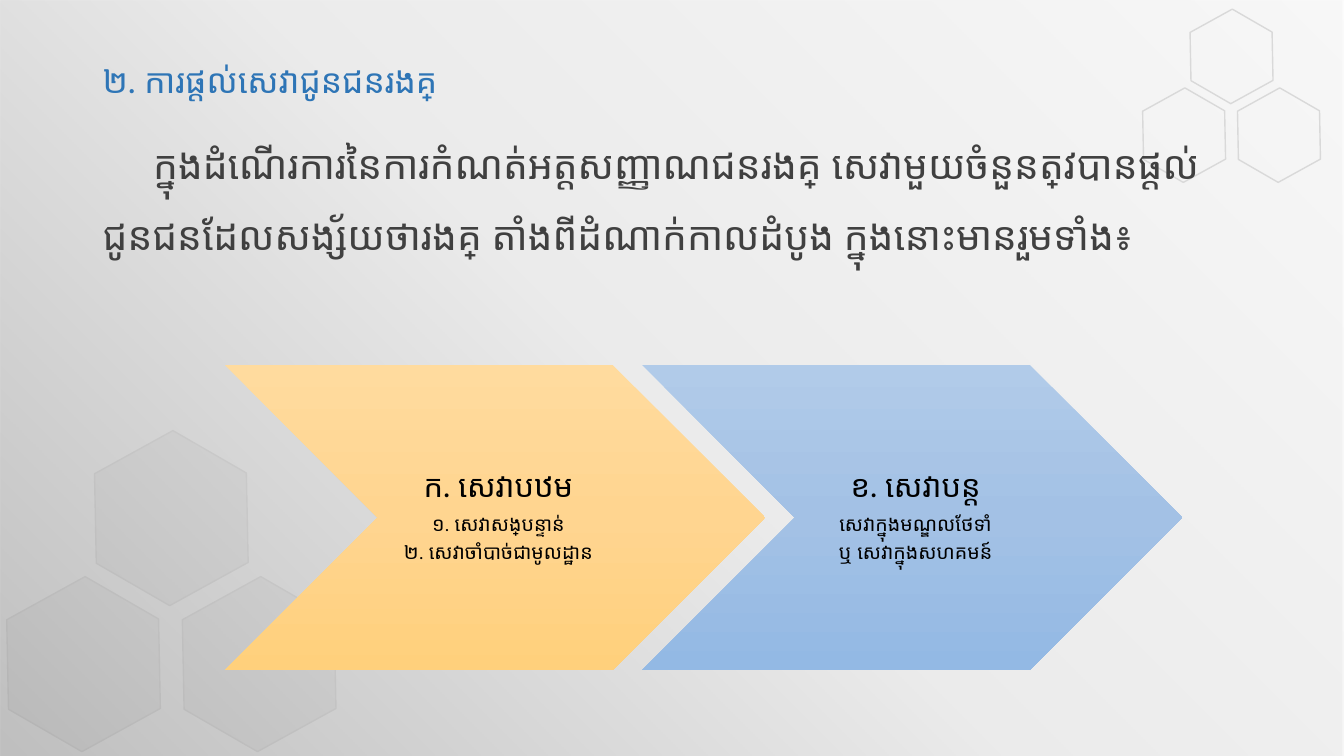
from dataclasses import dataclass
from typing import Any, Optional

from lxml import etree
from pptx import Presentation, util as u
from pptx.dml.color import RGBColor
from pptx.enum import shapes, text
from pptx.oxml.ns import qn

HUES = {
    "blue": "2E75B6", "dark": "404040", "black": "000000",
    "pale": "F2F2F2", "edge": "E7E6E6", "mist": "D9D9D9", "gray": "808080",
    "sand1": "FFDB9E", "sand2": "FFD590", "sand3": "FFD07C",
    "sky1": "B1CBE9", "sky2": "A3C1E5", "sky3": "93B9E4",
}
WIDE, HIGH = 13.33, 7.5
KIND = shapes.MSO_SHAPE


@dataclass
class Box:
    left: float
    top: float
    width: float
    height: float

    def emu(self) -> tuple[int, int, int, int]:
        return (u.Inches(self.left * WIDE / 100), u.Inches(self.top * HIGH / 100),
                u.Inches(self.width * WIDE / 100), u.Inches(self.height * HIGH / 100))


@dataclass
class Comb:
    head: Box
    edge: str
    fill: Optional[str] = None


@dataclass
class Line:
    words: str
    size: int
    font: str
    hue: str
    lead: float = 0.9
    after: int = 0
    align: Any = text.PP_ALIGN.LEFT


@dataclass
class Step:
    hues: list[str]
    title: str
    items: list[str]


COMBS = [
    Comb(Box(6.15, 58.4, 13.2, 20.27), "edge", "pale"),
    Comb(Box(88.07, 2, 7.13, 10.93), "mist"),
]
STEPS = [
    Step(["sand1", "sand2", "sand3"], "ក. សេវាបឋម",
         ["១. សេវាសង្គ្រោះបន្ទាន់", "២. សេវាចាំបាច់ជាមូលដ្ឋាន"]),
    Step(["sky1", "sky2", "sky3"], "ខ. សេវាបន្ត",
         ["សេវាក្នុងមណ្ឌលថែទាំ", "ឬ សេវាក្នុងសហគមន៍"]),
]
TITLE = Line("២. ការផ្តល់សេវាជូនជនរងគ្រោះ", 24, "Lato", "blue")
BODY = Line(
    "\tក្នុងដំណើរការនៃការកំណត់អត្តសញ្ញាណជនរងគ្រោះ សេវាមួយចំនួនត្រូវបាន"
    "ផ្តល់ជូនជនដែលសង្ស័យថារងគ្រោះ តាំងពីដំណាក់កាលដំបូង "
    "ក្នុងនោះមានរួមទាំង៖", 28, "Roboto", "dark", 1.5)


def tint(name: str) -> RGBColor:
    return RGBColor.from_string(HUES[name])


def draw(host: Any, kind: Any, box: Box) -> Any:
    shape = host.add_shape(kind, *box.emu())
    shape.shadow.inherit = False
    shape.fill.background()
    shape.line.fill.background()
    return shape


def blend(shape: Any, stops: list[tuple[int, str]], angle: int, alpha: int = 100) -> None:
    grad = etree.Element(qn("a:gradFill"), rotWithShape="1")
    group = etree.SubElement(grad, qn("a:gsLst"))
    for place, name in stops:
        stop = etree.SubElement(group, qn("a:gs"), pos=str(place * 1000))
        hue = etree.SubElement(stop, qn("a:srgbClr"), val=HUES[name])
        if alpha < 100:
            etree.SubElement(hue, qn("a:alpha"), val=str(alpha * 1000))
    etree.SubElement(grad, qn("a:lin"), ang=str(angle * 60000), scaled="0")
    props = shape._element.spPr
    props.replace(props.find(qn("a:noFill")), grad)


def comb(host: Any, item: Comb) -> None:
    group = host.add_group_shape().shapes
    head = item.head
    for side, row in ((0, 0), (-1, 1), (1, 1)):
        cell = draw(group, KIND.HEXAGON, Box(
            head.left + side * 0.495 * head.width,
            head.top + row * 0.953 * head.height, head.width, head.height))
        cell.rotation = 30
        cell.adjustments[0] = 0.302
        cell.adjustments[1] = 1.155
        cell.line.color.rgb = tint(item.edge)
        cell.line.width = u.Pt(1)
        if item.fill:
            cell.fill.solid()
            cell.fill.fore_color.rgb = tint(item.fill)


def write(host: Any, box: Box, lines: list[Line], anchor: Any,
          pads: tuple[float, float, float, float] = (0.1, 0.05, 0.1, 0.05)) -> None:
    frame = host.add_textbox(*box.emu()).text_frame
    frame.word_wrap = True
    frame.vertical_anchor = anchor
    (frame.margin_left, frame.margin_top,
     frame.margin_right, frame.margin_bottom) = map(u.Inches, pads)
    for spot, line in enumerate(lines):
        para = frame.add_paragraph() if spot else frame.paragraphs[0]
        para.alignment = line.align
        para.line_spacing = line.lead
        if line.after:
            gap = etree.SubElement(para._p.get_or_add_pPr(), qn("a:spcAft"))
            etree.SubElement(gap, qn("a:spcPct"), val=str(line.after * 1000))
        run = para.add_run()
        run.text = line.words
        run.font.size = u.Pt(line.size)
        run.font.color.rgb = tint(line.hue)
        run.font.name = line.font
        etree.SubElement(run._r.get_or_add_rPr(), qn("a:cs"), typeface=line.font)


def arrow(host: Any, rank: int, step: Step) -> None:
    group = host.add_group_shape().shapes
    left, top, high = 16.73 + rank * 31.04, 48.27, 40.4
    shape = draw(group, KIND.CHEVRON, Box(left, top, 40.21, high))
    blend(shape, list(zip((0, 50, 100), step.hues)), 90)
    mid = text.PP_ALIGN.CENTER
    lines = [Line(step.title, 22, "Lato", "black", after=35, align=mid)]
    lines += [Line(item, 14, "Roboto", "black", after=35, align=mid) for item in step.items]
    write(group, Box(left + 11.36, top, 17.48, high), lines,
          text.MSO_ANCHOR.MIDDLE, (0.1, 0.03, 0.03, 0.03))


def main() -> None:
    deck = Presentation()
    deck.slide_width, deck.slide_height = u.Inches(WIDE), u.Inches(HIGH)
    host = deck.slides.add_slide(deck.slide_layouts[6]).shapes
    comb(host, COMBS[0])
    veil = draw(host, KIND.RECTANGLE, Box(0, 0, 100, 100))
    blend(veil, [(0, "gray"), (48, "mist"), (100, "pale")], 315, 50)
    comb(host, COMBS[1])
    write(host, Box(6.9, 5.33, 86.27, 11.07), [TITLE], text.MSO_ANCHOR.MIDDLE)
    write(host, Box(6.9, 14.8, 86.27, 30), [BODY], text.MSO_ANCHOR.TOP)
    for rank, step in enumerate(STEPS):
        arrow(host, rank, step)
    deck.save("out.pptx")


if __name__ == "__main__":
    main()
